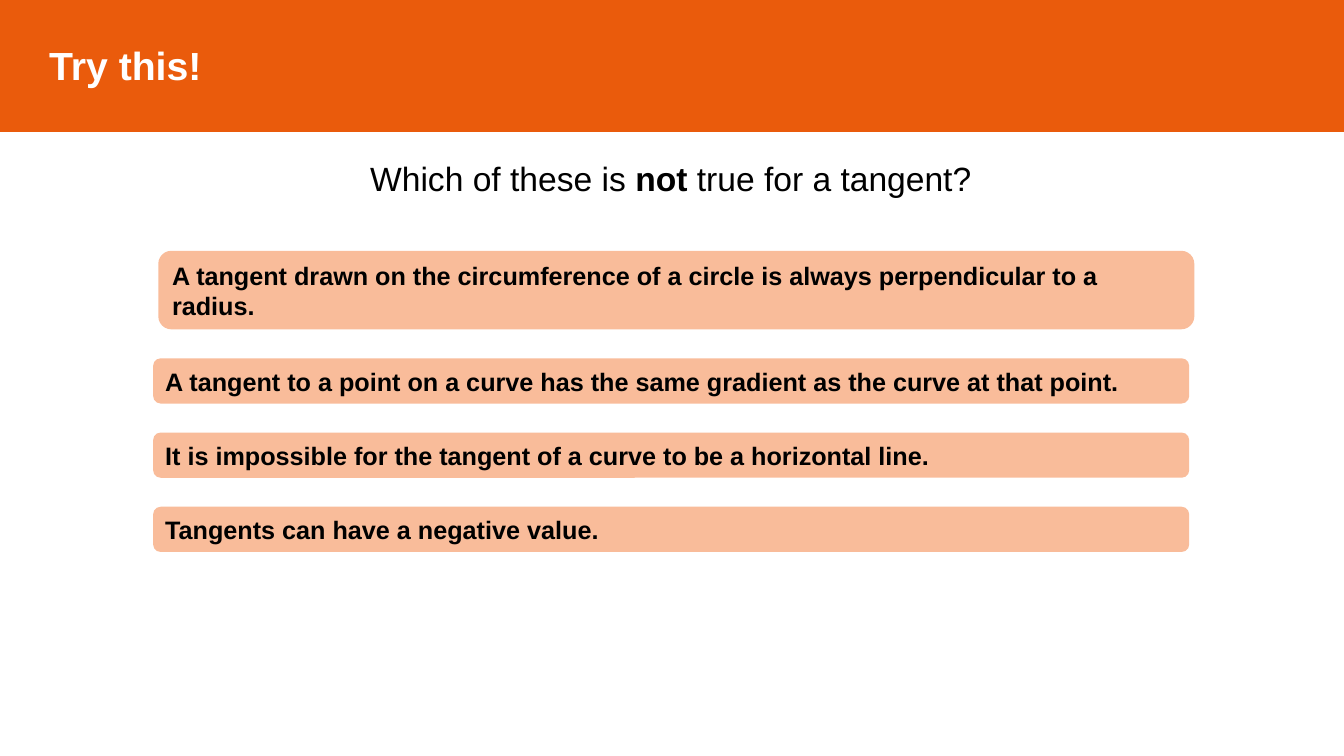
from pptx import Presentation
from pptx.dml.color import RGBColor
from pptx.enum.shapes import MSO_SHAPE
from pptx.enum.text import MSO_ANCHOR, MSO_AUTO_SIZE, PP_ALIGN
from pptx.util import Cm, Pt

ORANGE, PEACH, BLACK, WHITE = "EA5B0C", "F9BC9A", "000000", "FFFFFF"
ANSWER_WIDTH, ANSWER_GAP = 26.11, 0.73
ANSWERS = [
    ("A tangent drawn on the circumference of a circle is always perpendicular to a radius.", 0.13, 1.98),
    ("A tangent to a point on a curve has the same gradient as the curve at that point.", 0, 1.14),
    ("It is impossible for the tangent of a curve to be a horizontal line.", 0, 1.14),
    ("Tangents can have a negative value.", 0, 1.14),
]


def colour(code):
    """Turn a hex string into a colour."""
    return RGBColor.from_string(code)


def format_span(span, size, code, bold):
    """Set the font of one run."""
    span.font.name = "Arial"
    span.font.size = Pt(size)
    span.font.bold = bold
    span.font.color.rgb = colour(code)


def add_panel(page, kind, left, top, width, height, fill, text, size, code):
    """Draw a filled shape with bold, left-aligned text."""
    panel = page.shapes.add_shape(kind, Cm(left), Cm(top), Cm(width), Cm(height))
    panel.shadow.inherit = False
    panel.fill.solid()
    panel.fill.fore_color.rgb = colour(fill)
    panel.line.fill.background()
    frame = panel.text_frame
    frame.word_wrap = True
    frame.vertical_anchor = MSO_ANCHOR.MIDDLE
    frame.text = text
    para = frame.paragraphs[0]
    para.alignment = PP_ALIGN.LEFT
    format_span(para.runs[0], size, code, True)
    return panel


def add_banner(page, left, top, width, height):
    """Draw the title banner."""
    banner = add_panel(page, MSO_SHAPE.RECTANGLE, left, top, width, height,
                       ORANGE, "Try this!", 28, WHITE)
    banner.line.color.rgb = colour(ORANGE)
    banner.line.width = Pt(1)
    banner.text_frame.margin_left = Cm(1.27)


def add_question(page, left, top, width, height):
    """Write the centred question with its stressed word."""
    box = page.shapes.add_textbox(Cm(left), Cm(top), Cm(width), Cm(height))
    frame = box.text_frame
    frame.word_wrap = True
    frame.auto_size = MSO_AUTO_SIZE.SHAPE_TO_FIT_TEXT
    para = frame.paragraphs[0]
    para.alignment = PP_ALIGN.CENTER
    for text in ("Which of these is ", "not", " true for a tangent?"):
        span = para.add_run()
        span.text = text
        format_span(span, 24, BLACK, text == "not")


def add_answers(page, left, top, width):
    """Stack the answer panels with equal gaps."""
    for text, shift, height in ANSWERS:
        panel = add_panel(page, MSO_SHAPE.ROUNDED_RECTANGLE, left + shift, top,
                          width, height, PEACH, text, 18, BLACK)
        panel.text_frame.auto_size = MSO_AUTO_SIZE.SHAPE_TO_FIT_TEXT
        top += height + ANSWER_GAP


def main():
    """Build and save the slide."""
    deck = Presentation()
    deck.slide_width, deck.slide_height = Cm(33.87), Cm(19.05)
    page = deck.slides.add_slide(deck.slide_layouts[6])
    add_banner(page, -0.03, -0.03, 33.92, 3.35)
    add_question(page, 0.33, 3.86, 33.15, 1.28)
    add_answers(page, 3.86, 6.32, ANSWER_WIDTH)
    deck.save("out.pptx")


if __name__ == "__main__":
    main()
